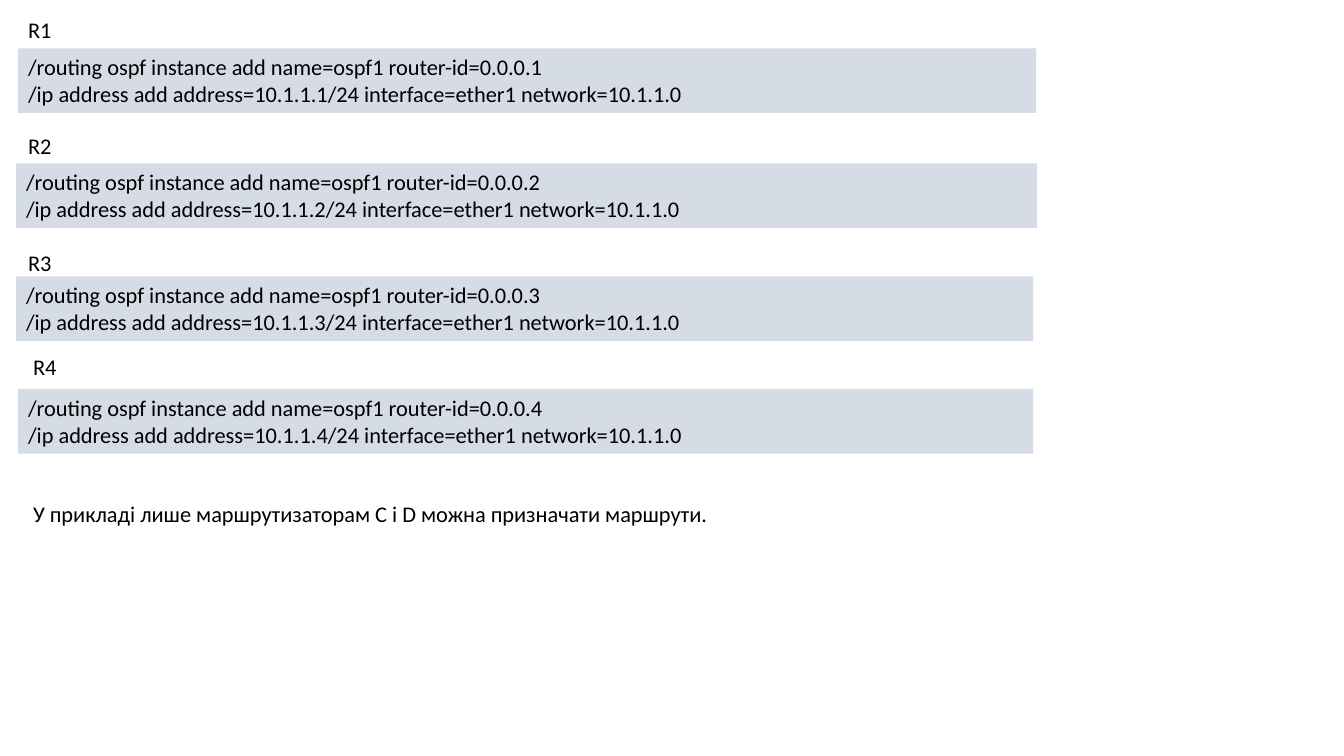
from pptx import Presentation
from pptx.dml.color import RGBColor
from pptx.enum.shapes import MSO_SHAPE as Shape
from pptx.enum.text import MSO_ANCHOR as Anchor, MSO_AUTO_SIZE as Fit, PP_ALIGN as Align
from pptx.util import Inches, Pt

BLACK = RGBColor(0x00, 0x00, 0x00)
PALE = RGBColor(0xD6, 0xDC, 0xE5)

# Grid: 80 columns by 20 rows over the whole slide
WIDE, HIGH = Inches(13.33), Inches(7.5)
COLS, ROWS = 80, 20
LINE = 0.99   # rows in a one-line box
CODE = 1.71   # rows in a two-line box

FONT = {"name": "Calibri", "size": Pt(16)}

# Each router: label (column, row, width), code box (column, row, width)
ROUTERS = [
    ((1.08, 0.29, 2.94), (1.08, 1.28, 60.6)),
    ((1.08, 3.36, 2.94), (0.96, 4.32, 60.78)),
    ((1.08, 6.45, 2.94), (0.96, 7.31, 60.54)),
    ((1.38, 9.2, 2.64), (1.08, 10.29, 60.42)),
]
NOTE = (1.38, 13.09, 60.96)


def place(col, row, cols, rows):
    """Turn grid units into left, top, width and height."""
    return (int(WIDE * col / COLS), int(HIGH * row / ROWS),
            int(WIDE * cols / COLS), int(HIGH * rows / ROWS))


def write(shape, lines, wrap=True):
    frame = shape.text_frame
    frame.text = "\n".join(lines)
    form = {"word_wrap": wrap, "auto_size": Fit.SHAPE_TO_FIT_TEXT,
            "vertical_anchor": Anchor.TOP}
    for key, value in form.items():
        setattr(frame, key, value)
    for para in frame.paragraphs:
        para.alignment = Align.LEFT
        for run in para.runs:
            for key, value in FONT.items():
                setattr(run.font, key, value)
            run.font.color.rgb = BLACK


def add_text(slide, spot, text, wrap=True):
    box = slide.shapes.add_textbox(*place(*spot, LINE))
    write(box, [text], wrap)


def add_code(slide, spot, lines):
    box = slide.shapes.add_shape(Shape.RECTANGLE, *place(*spot, CODE))
    box.shadow.inherit = False
    box.fill.solid()
    box.fill.fore_color.rgb = PALE
    box.line.fill.background()
    write(box, lines)


def main():
    deck = Presentation()
    deck.slide_width, deck.slide_height = WIDE, HIGH
    slide = deck.slides.add_slide(deck.slide_layouts[6])

    # Router labels and their commands
    for num, (label, code) in enumerate(ROUTERS, 1):
        add_text(slide, label, f"R{num}", wrap=False)
        add_code(slide, code, [
            f"/routing ospf instance add name=ospf1 router-id=0.0.0.{num}",
            f"/ip address add address=10.1.1.{num}/24 interface=ether1 network=10.1.1.0",
        ])

    # Closing remark
    add_text(slide, NOTE, "У прикладі лише маршрутизаторам C і D можна призначати маршрути.")

    deck.save("out.pptx")


if __name__ == "__main__":
    main()
